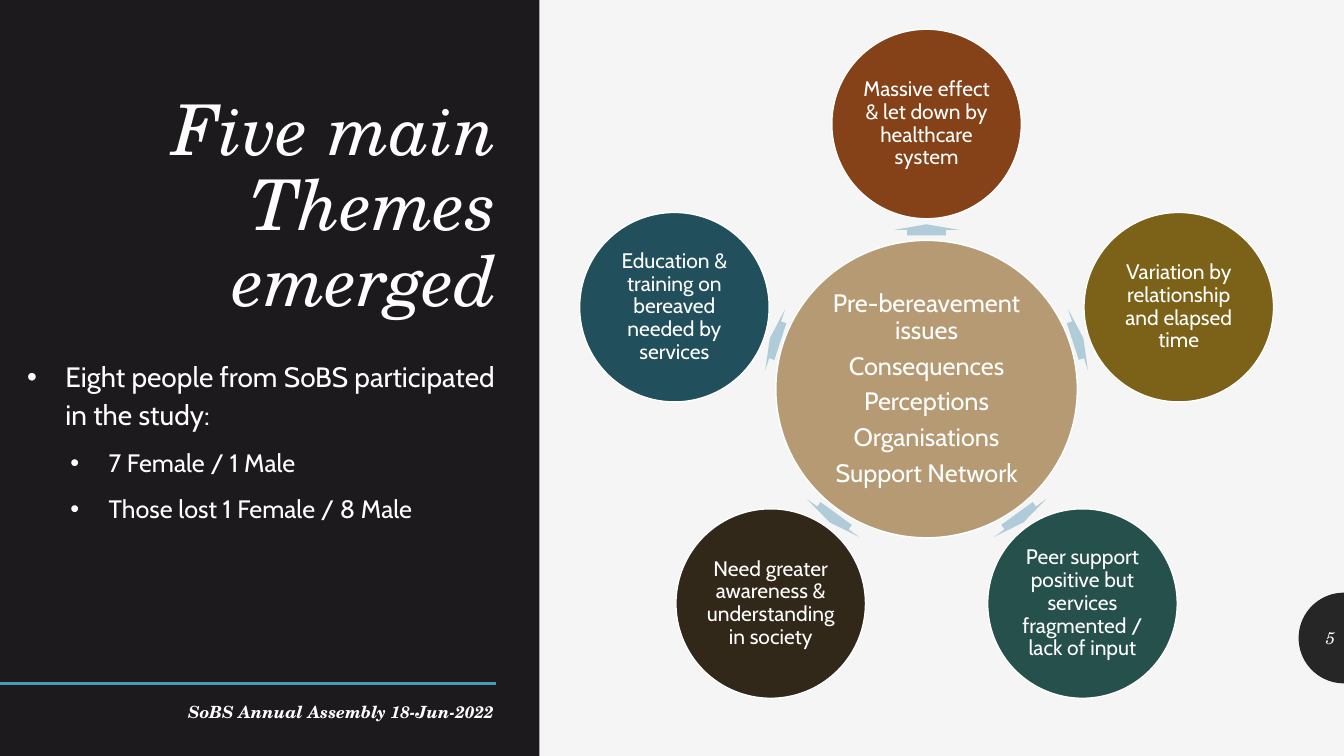
import math
from dataclasses import dataclass

from lxml import etree
from pptx import Presentation
from pptx import util as u
from pptx.dml.color import RGBColor
from pptx.enum import shapes, text
from pptx.oxml.ns import qn

COLORS = {
    "background": "F5F5F5",
    "panel": "1D1A1D",
    "badge": "262626",
    "rule": "439EB7",
    "hub": "B59A73",
    "arrow": "B0CCD8",
    "white": "FFFFFF",
    "rust": "854117",
    "olive": "7C6218",
    "green": "26504C",
    "brown": "32281A",
    "blue": "224F5C",
}
SERIF = "TeX Gyre Schola"
SANS = "Cabin"
HUB_X, HUB_Y = 9.19, 3.86
THEME_ORBIT, ARROW_ORBIT = 2.63, 1.58


@dataclass
class Style:
    font: str
    size: float
    color: str = "white"
    bold: bool = False
    italic: bool = False
    align: text.PP_ALIGN = text.PP_ALIGN.CENTER
    line_spacing: float = 1.0
    gap_after: float = 0
    inset: float = 0.02


@dataclass
class Label:
    left: float
    top: float
    width: float
    height: float
    words: str
    style: Style
    anchor: text.MSO_ANCHOR = text.MSO_ANCHOR.TOP


@dataclass
class Theme:
    words: str
    color: str


@dataclass
class Bullet:
    words: str
    level: int
    size: float
    indent: float


RIGHT = text.PP_ALIGN.RIGHT
HUB_STYLE = Style(SANS, 18, line_spacing=0.9, gap_after=6, inset=0.03)
THEME_STYLE = Style(SANS, 15, line_spacing=0.9)
LABELS = [
    Label(0.07, 0.37, 4.96, 2.87, "Five main Themes emerged",
          Style(SERIF, 50, italic=True, align=RIGHT, line_spacing=0.9),
          text.MSO_ANCHOR.BOTTOM),
    Label(12.89, 6.13, 0.45, 0.4, "5",
          Style(SERIF, 12, "background", italic=True, align=RIGHT),
          text.MSO_ANCHOR.MIDDLE),
    Label(0.83, 6.91, 4.17, 0.4, "SoBS Annual Assembly 18-Jun-2022",
          Style(SERIF, 12, bold=True, italic=True, align=RIGHT)),
]
BULLETS = [
    Bullet("Eight people from SoBS participated in the study:", 0, 20, 0.38),
    Bullet("7 Female / 1 Male", 1, 18, 0.81),
    Bullet("Those lost 1 Female / 8 Male", 1, 18, 0.81),
]
HUB_LINES = ["Pre-bereavement issues", "Consequences", "Perceptions",
             "Organisations", "Support Network"]
THEMES = [
    Theme("Massive effect & let down by healthcare system", "rust"),
    Theme("Variation by relationship and elapsed time", "olive"),
    Theme("Peer support positive but services fragmented / lack of input", "green"),
    Theme("Need greater awareness & understanding in society", "brown"),
    Theme("Education & training on bereaved needed by services", "blue"),
]


def rgb(name: str) -> RGBColor:
    return RGBColor.from_string(COLORS[name])


def paint(shape, fill: str, outline: str = "") -> None:
    shape.shadow.inherit = False
    shape.fill.solid()
    shape.fill.fore_color.rgb = rgb(fill)
    if outline:
        shape.line.color.rgb = rgb(outline)
        shape.line.width = u.Pt(1)
    else:
        shape.line.fill.background()


def write(frame, lines: list[str], style: Style) -> None:
    frame.word_wrap = True
    for index, line in enumerate(lines):
        para = frame.paragraphs[0] if index == 0 else frame.add_paragraph()
        para.text = line
        para.alignment = style.align
        para.line_spacing = style.line_spacing
        para.space_after = u.Pt(style.gap_after)
        para.font.name = style.font
        para.font.size = u.Pt(style.size)
        para.font.bold = style.bold
        para.font.italic = style.italic
        para.font.color.rgb = rgb(style.color)


def add_label(page, label: Label) -> None:
    box = page.shapes.add_textbox(u.Inches(label.left), u.Inches(label.top),
                                  u.Inches(label.width), u.Inches(label.height))
    box.text_frame.vertical_anchor = label.anchor
    write(box.text_frame, [label.words], label.style)


def add_centered(page, kind, x: float, y: float, width: float, height: float,
                 fill: str, outline: str = ""):
    shape = page.shapes.add_shape(kind, u.Inches(x - width / 2), u.Inches(y - height / 2),
                                  u.Inches(width), u.Inches(height))
    paint(shape, fill, outline)
    return shape


def add_circle(page, x: float, y: float, width: float, height: float,
               fill: str, lines: list[str], style: Style) -> None:
    circle = add_centered(page, shapes.MSO_SHAPE.OVAL, x, y, width, height, fill, "white")
    frame = circle.text_frame
    frame.vertical_anchor = text.MSO_ANCHOR.MIDDLE
    frame.margin_left = frame.margin_right = u.Inches(style.inset)
    frame.margin_top = frame.margin_bottom = u.Inches(style.inset)
    write(frame, lines, style)


def add_themes(page) -> None:
    add_circle(page, HUB_X, HUB_Y, 2.99, 2.95, "hub", HUB_LINES, HUB_STYLE)
    for index, theme in enumerate(THEMES):
        degrees = (270 + index * 360 / len(THEMES)) % 360
        across, down = math.cos(math.radians(degrees)), math.sin(math.radians(degrees))
        arrow = add_centered(page, shapes.MSO_SHAPE.RIGHT_ARROW,
                             HUB_X + ARROW_ORBIT * across, HUB_Y + ARROW_ORBIT * down,
                             0.11, 0.64, "arrow")
        arrow.adjustments[0] = 0.6
        arrow.adjustments[1] = 0.5
        arrow.rotation = degrees
        add_circle(page, HUB_X + THEME_ORBIT * across, HUB_Y + THEME_ORBIT * down,
                   1.88, 1.88, theme.color, [theme.words], THEME_STYLE)


def add_panel(page) -> None:
    panel = page.shapes.add_shape(shapes.MSO_SHAPE.RECTANGLE, 0, 0,
                                  u.Inches(5.35), u.Inches(7.5))
    paint(panel, "panel")
    rule = page.shapes.add_connector(shapes.MSO_CONNECTOR.STRAIGHT, 0, u.Inches(6.78),
                                     u.Inches(4.92), u.Inches(6.78))
    rule.line.color.rgb = rgb("rule")
    rule.line.width = u.Pt(2)
    etree.SubElement(rule._element.spPr, qn("a:effectLst"))


def add_badge(page) -> None:
    arc = [(u.Inches(13.33 + 0.45 * math.cos(math.radians(degrees))),
            u.Inches(6.33 + 0.45 * math.sin(math.radians(degrees))))
           for degrees in range(90, 271, 5)]
    builder = page.shapes.build_freeform(*arc[0])
    builder.add_line_segments(arc[1:], close=True)
    paint(builder.convert_to_shape(), "badge")


def add_bullets(page) -> None:
    box = page.shapes.add_textbox(u.Inches(0.17), u.Inches(3.48),
                                  u.Inches(4.86), u.Inches(3.2))
    frame = box.text_frame
    for index, bullet in enumerate(BULLETS):
        para = frame.paragraphs[0] if index == 0 else frame.add_paragraph()
        para.text = bullet.words
        para.level = bullet.level
        para.line_spacing = 1.12
        para.space_before = u.Pt(9 if index else 0)
        properties = para._p.get_or_add_pPr()
        properties.set("marL", str(u.Inches(bullet.indent)))
        properties.set("indent", str(u.Inches(-0.38)))
        etree.SubElement(properties, qn("a:buFont"), typeface="Arial")
        etree.SubElement(properties, qn("a:buChar"), char="•")
        para.font.name = SANS
        para.font.size = u.Pt(bullet.size)
        para.font.color.rgb = rgb("white")
    frame.word_wrap = True


def main() -> None:
    deck = Presentation()
    deck.slide_width, deck.slide_height = u.Inches(13.33), u.Inches(7.5)
    page = deck.slides.add_slide(deck.slide_layouts[6])
    page.background.fill.solid()
    page.background.fill.fore_color.rgb = rgb("background")
    add_badge(page)
    add_panel(page)
    add_bullets(page)
    add_themes(page)
    for label in LABELS:
        add_label(page, label)
    deck.save("out.pptx")


if __name__ == "__main__":
    main()
